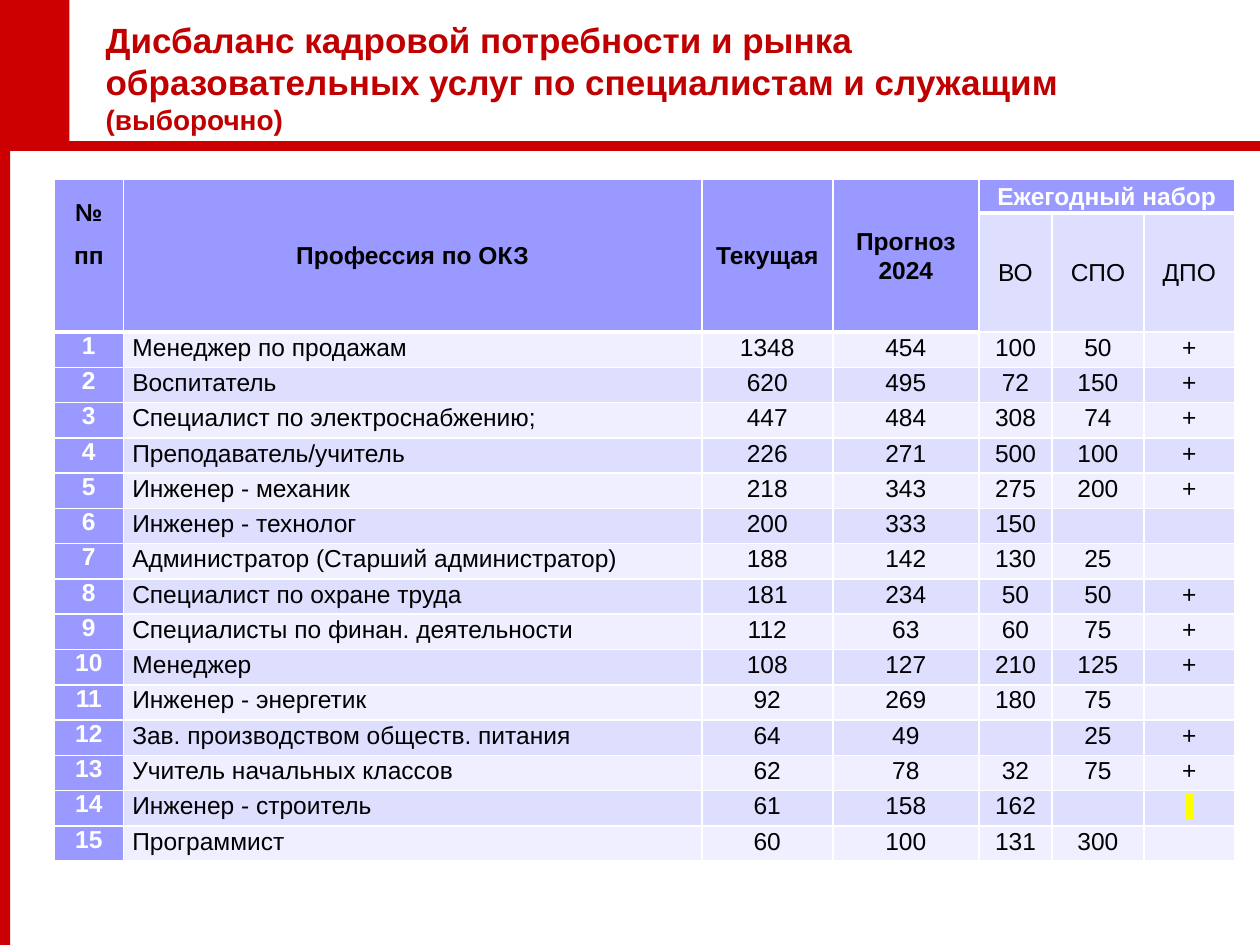
"""Build a slide with a table comparing staffing demand and training intake."""
import dataclasses
import typing

import lxml.etree
import pptx
import pptx.dml.color
import pptx.enum.shapes
import pptx.enum.text
import pptx.oxml.ns
import pptx.util

Inches = pptx.util.Inches
Pt = pptx.util.Pt
RGBColor = pptx.dml.color.RGBColor
Align = pptx.enum.text.PP_ALIGN
Anchor = pptx.enum.text.MSO_ANCHOR
qn = pptx.oxml.ns.qn

RED = RGBColor(0xCC, 0x00, 0x00)
DARK_RED = RGBColor(0xC0, 0x00, 0x00)
WHITE = RGBColor(0xFF, 0xFF, 0xFF)
BLACK = RGBColor(0x00, 0x00, 0x00)
YELLOW = RGBColor(0xFF, 0xFF, 0x00)
VIOLET = RGBColor(0x99, 0x99, 0xFF)
LILAC = RGBColor(0xDE, 0xDE, 0xFF)
PALE = RGBColor(0xEF, 0xEF, 0xFF)

FONT = "Arial"
TABLE_SIZE = Pt(14)
COLUMN_WIDTHS = (0.55, 4.59, 1.04, 1.16, 0.58, 0.73, 0.72)
HEADER_HEIGHTS = (0.27, 0.92)
ROW_HEIGHT = 0.28
INTAKE_COLUMN = 4


@dataclasses.dataclass(frozen=True)
class CellStyle:
    fill: RGBColor
    color: RGBColor = BLACK
    bold: bool = False
    align: Align = Align.CENTER
    anchor: Anchor = Anchor.TOP
    spacing: typing.Optional[float] = 1.07
    side: float = 0.07
    bottom: float = 0


class Profession(typing.NamedTuple):
    title: str
    current: str
    forecast: str
    higher: str
    secondary: str
    additional: str


PROFESSIONS = (
    Profession("Менеджер по продажам", "1348", "454", "100", "50", "+"),
    Profession("Воспитатель", "620", "495", "72", "150", "+"),
    Profession("Специалист по электроснабжению;", "447", "484", "308", "74", "+"),
    Profession("Преподаватель/учитель", "226", "271", "500", "100", "+"),
    Profession("Инженер - механик", "218", "343", "275", "200", "+"),
    Profession("Инженер - технолог", "200", "333", "150", "", ""),
    Profession("Администратор (Старший администратор)", "188", "142", "130", "25", ""),
    Profession("Специалист по охране труда", "181", "234", "50", "50", "+"),
    Profession("Специалисты по финан. деятельности", "112", "63", "60", "75", "+"),
    Profession("Менеджер", "108", "127", "210", "125", "+"),
    Profession("Инженер - энергетик", "92", "269", "180", "75", ""),
    Profession("Зав. производством обществ. питания", "64", "49", "", "25", "+"),
    Profession("Учитель начальных классов", "62", "78", "32", "75", "+"),
    Profession("Инженер - строитель", "61", "158", "162", "", " "),
    Profession("Программист", "60", "100", "131", "300", ""),
)

HEADING = CellStyle(VIOLET, bold=True, anchor=Anchor.MIDDLE, spacing=1.06, side=0.03)
NUMBER_HEADING = dataclasses.replace(HEADING, bottom=0.34)
INTAKE_HEADING = CellStyle(VIOLET, WHITE, True, anchor=Anchor.MIDDLE)
LEVEL_HEADING = CellStyle(LILAC, anchor=Anchor.MIDDLE)
NUMBER = CellStyle(VIOLET, WHITE, True, spacing=None)


def add_run(paragraph, text: str, size: int, color: RGBColor, bold: bool):
    run = paragraph.add_run()
    run.text = text
    run.font.name = FONT
    run.font.size = size
    run.font.bold = bold
    run.font.color.rgb = color
    return run


def add_bar(slide, width: float, height: float) -> None:
    bar = slide.shapes.add_shape(
        pptx.enum.shapes.MSO_SHAPE.RECTANGLE, 0, 0, Inches(width), Inches(height)
    )
    bar.shadow.inherit = False
    bar.fill.solid()
    bar.fill.fore_color.rgb = RED
    bar.line.fill.background()


def add_rule(slide, top: float) -> None:
    rule = slide.shapes.add_connector(
        pptx.enum.shapes.MSO_CONNECTOR.STRAIGHT, 0, Inches(top), Inches(10), Inches(top)
    )
    rule.line.color.rgb = RED
    rule.line.width = Pt(6)
    lxml.etree.SubElement(rule._element.spPr, qn("a:effectLst"))


def add_title(slide) -> None:
    title = slide.shapes.add_textbox(Inches(0.74), Inches(0.11), Inches(8.13), Inches(1.32))
    frame = title.text_frame
    frame.word_wrap = True
    frame.vertical_anchor = Anchor.MIDDLE
    frame.margin_bottom = Inches(0.37)
    paragraph = frame.paragraphs[0]
    heading = "Дисбаланс кадровой потребности и рынка образовательных услуг по специалистам и служащим "
    add_run(paragraph, heading, Pt(20), DARK_RED, True)
    add_run(paragraph, "(выборочно)", Pt(16), DARK_RED, True)


def add_solid(parent, tag: str, color: RGBColor) -> None:
    fill = lxml.etree.SubElement(parent, qn(tag))
    lxml.etree.SubElement(fill, qn("a:srgbClr"), val=str(color))


def prepare_cell(cell, row: int, column: int) -> None:
    grouped = column >= INTAKE_COLUMN
    heavy_top = row == (1 if grouped else 2)
    heavy_bottom = row == 0 or (row == 1 and not grouped)
    properties = cell._tc.get_or_add_tcPr()
    for edge, heavy in (("L", False), ("R", False), ("T", heavy_top), ("B", heavy_bottom)):
        border = lxml.etree.SubElement(properties, qn(f"a:ln{edge}"), w=str(Pt(3 if heavy else 1)))
        add_solid(border, "a:solidFill", WHITE)
    cell.margin_left = cell.margin_right = cell.margin_top = cell.margin_bottom = 0
    ending = cell.text_frame.paragraphs[0]._p.get_or_add_endParaRPr()
    ending.set("sz", str(int(TABLE_SIZE.pt * 100)))


def fill_cell(cell, lines: typing.Sequence[str], style: CellStyle) -> None:
    cell.fill.solid()
    cell.fill.fore_color.rgb = style.fill
    cell.vertical_anchor = style.anchor
    cell.margin_left = cell.margin_right = Inches(style.side)
    cell.margin_bottom = Inches(style.bottom)
    for index, line in enumerate(lines):
        paragraph = cell.text_frame.add_paragraph() if index else cell.text_frame.paragraphs[0]
        paragraph.alignment = style.align
        if style.spacing:
            paragraph.line_spacing = style.spacing
            paragraph.space_after = Pt(8)
        if line:
            run = add_run(paragraph, line, TABLE_SIZE, style.color, style.bold)
            if not line.strip():
                add_solid(run.font._element, "a:highlight", YELLOW)
                latin = run.font._element.find(qn("a:latin"))
                run.font._element.append(latin)


def add_staffing_table(slide) -> None:
    heights = HEADER_HEIGHTS + (ROW_HEIGHT,) * len(PROFESSIONS)
    table = slide.shapes.add_table(
        len(heights), len(COLUMN_WIDTHS), Inches(0.43), Inches(1.42),
        Inches(sum(COLUMN_WIDTHS)), Inches(sum(heights)),
    ).table
    for column, width in zip(table.columns, COLUMN_WIDTHS):
        column.width = Inches(width)
    for row, height in enumerate(heights):
        table.rows[row].height = Inches(height)
        for column in range(len(COLUMN_WIDTHS)):
            prepare_cell(table.cell(row, column), row, column)

    headings = (("№", "пп"), ("Профессия по ОКЗ",), ("Текущая",), ("Прогноз 2024",))
    for column, lines in enumerate(headings):
        table.cell(0, column).merge(table.cell(1, column))
        fill_cell(table.cell(0, column), lines, HEADING if column else NUMBER_HEADING)
    table.cell(0, INTAKE_COLUMN).merge(table.cell(0, len(COLUMN_WIDTHS) - 1))
    fill_cell(table.cell(0, INTAKE_COLUMN), ("Ежегодный набор",), INTAKE_HEADING)
    for column, level in enumerate(("ВО", "СПО", "ДПО"), INTAKE_COLUMN):
        fill_cell(table.cell(1, column), (level,), LEVEL_HEADING)

    for number, profession in enumerate(PROFESSIONS, 1):
        row = number + 1
        fill_cell(table.cell(row, 0), (str(number),), NUMBER)
        value_style = CellStyle(PALE if number % 2 else LILAC)
        title_style = dataclasses.replace(value_style, align=Align.LEFT)
        for column, value in enumerate(profession, 1):
            fill_cell(table.cell(row, column), (value,), title_style if column == 1 else value_style)


def main() -> None:
    deck = pptx.Presentation()
    deck.slide_width, deck.slide_height = Inches(10), Inches(7.5)
    slide = deck.slides.add_slide(deck.slide_layouts[6])
    add_bar(slide, 0.08, 7.5)
    add_rule(slide, 1.16)
    add_bar(slide, 0.55, 1.14)
    add_title(slide)
    add_staffing_table(slide)
    deck.save("out.pptx")


if __name__ == "__main__":
    main()
